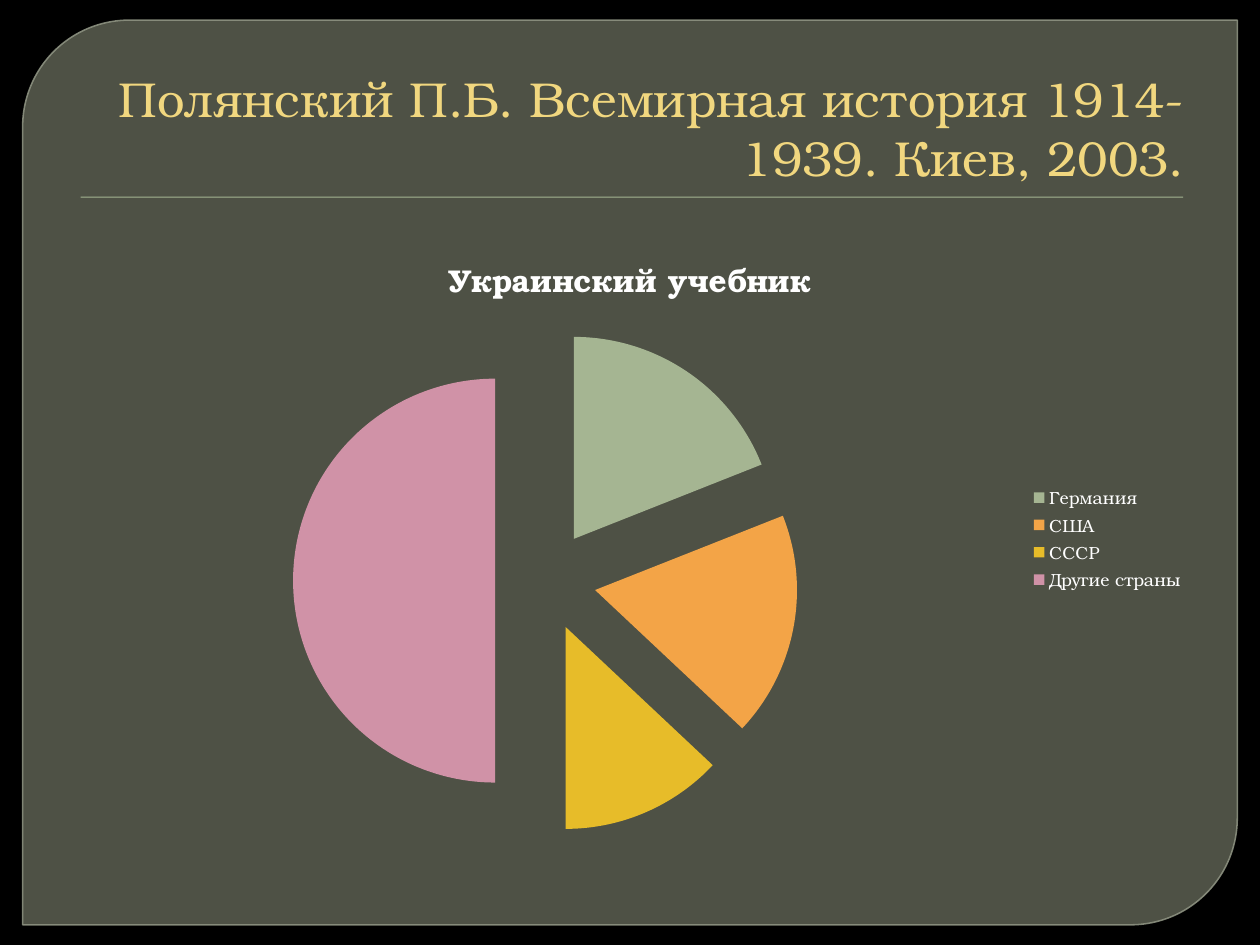
import pptx
import pptx.chart.data
import pptx.dml.color
import pptx.enum.chart
import pptx.enum.shapes
import pptx.enum.text
import pptx.oxml.ns
import pptx.util
from lxml import etree

# Content
HEADING = "Полянский П.Б. Всемирная история 1914-1939. Киев, 2003."
TEXTBOOK = "Украинский учебник"
COUNTRIES = [
    ("Германия", 19, "A5B592"),
    ("США", 18, "F3A447"),
    ("СССР", 13, "E7BC29"),
    ("Другие страны", 50, "D092A7"),
]
FONT = "TeX Gyre Bonum"
WIDTH, HEIGHT = 10, 7.5
MARGIN = 0.05 * WIDTH
EXPLOSION = 25


def color(hex_code):
    return pptx.dml.color.RGBColor.from_string(hex_code)


def box(*lengths):
    return [pptx.util.Inches(length) for length in lengths]


def style(font, size, hex_code, bold=False):
    font.name, font.size, font.bold = FONT, pptx.util.Pt(size), bold
    font.color.rgb = color(hex_code)


def set_opacity(fill_owner, percent):
    """Add an alpha value to the solid colour of a fill or line."""
    rgb = fill_owner.find(pptx.oxml.ns.qn("a:solidFill"))[0]
    etree.SubElement(rgb, pptx.oxml.ns.qn("a:alpha"), val=str(percent * 1000))


presentation = pptx.Presentation()
presentation.slide_width, presentation.slide_height = box(WIDTH, HEIGHT)
slide = presentation.slides.add_slide(presentation.slide_layouts[5])
slide.background.fill.solid()
slide.background.fill.fore_color.rgb = color("000000")
shapes = slide.shapes
SHAPE = pptx.enum.shapes.MSO_SHAPE

# Backdrop panel with two rounded corners
panel = shapes.add_shape(SHAPE.ROUND_2_DIAG_RECTANGLE, *box(0.18, 0.16, 9.64, 7.18))
panel.adjustments[0], panel.adjustments[1] = 0.118, 0
panel.shadow.inherit = False
panel.fill.solid()
panel.fill.fore_color.rgb = color("787D6B")
panel.line.color.rgb = color("8F9483")
panel.line.width = pptx.util.Pt(0.87)
properties = panel._element.spPr
set_opacity(properties, 65)
set_opacity(properties.find(pptx.oxml.ns.qn("a:ln")), 88)

# Rule under the heading
rule = shapes.add_shape(SHAPE.RECTANGLE, *box(0.64, 1.56, 8.75, 0.01))
rule.shadow.inherit = False
rule.fill.solid()
rule.fill.fore_color.rgb = color("A5B592")
rule.line.fill.background()

# Heading, brought in front of the panel
heading = shapes.title
shapes._spTree.append(heading._element)
heading.left, heading.top, heading.width, heading.height = box(
    MARGIN, 0.28, WIDTH - 2 * MARGIN, 1.25)
frame = heading.text_frame
frame.text = HEADING
frame.word_wrap = True
frame.auto_size = pptx.enum.text.MSO_AUTO_SIZE.NONE
frame.vertical_anchor = pptx.enum.text.MSO_ANCHOR.BOTTOM
frame.paragraphs[0].alignment = pptx.enum.text.PP_ALIGN.RIGHT
style(frame.paragraphs[0].runs[0].font, 28, "F1D77F")

# Pie chart of the countries' shares
shares = pptx.chart.data.CategoryChartData()
shares.categories = [name for name, _, _ in COUNTRIES]
shares.add_series(TEXTBOOK, [share for _, share, _ in COUNTRIES])
pie = shapes.add_chart(
    pptx.enum.chart.XL_CHART_TYPE.PIE_EXPLODED,
    *box(MARGIN, 1.8, WIDTH - 2 * MARGIN, 4.95), shares).chart
style(pie.font, 10, "FFFFFF")

pie.has_title = True
pie.chart_title.include_in_layout = False
caption = pie.chart_title.text_frame
caption.text = TEXTBOOK
style(caption.paragraphs[0].runs[0].font, 18, "FFFFFF", bold=True)

pie.has_legend = True
pie.legend.position = pptx.enum.chart.XL_LEGEND_POSITION.RIGHT
pie.legend.include_in_layout = False
style(pie.legend.font, 10, "FFFFFF")

plot = pie.plots[0]
plot.vary_by_categories = True
plot.has_data_labels = False
slices = plot.series[0]
for index, (_, _, hex_code) in enumerate(COUNTRIES):
    wedge = slices.points[index].format
    wedge.fill.solid()
    wedge.fill.fore_color.rgb = color(hex_code)
    wedge.line.fill.background()

# Pull every slice out by the same share of the radius
for explosion in slices._element.findall(pptx.oxml.ns.qn("c:explosion")):
    slices._element.remove(explosion)
for point in slices._element.findall(pptx.oxml.ns.qn("c:dPt")):
    explosion = etree.Element(pptx.oxml.ns.qn("c:explosion"), val=str(EXPLOSION))
    point.find(pptx.oxml.ns.qn("c:spPr")).addprevious(explosion)

presentation.save("out.pptx")
